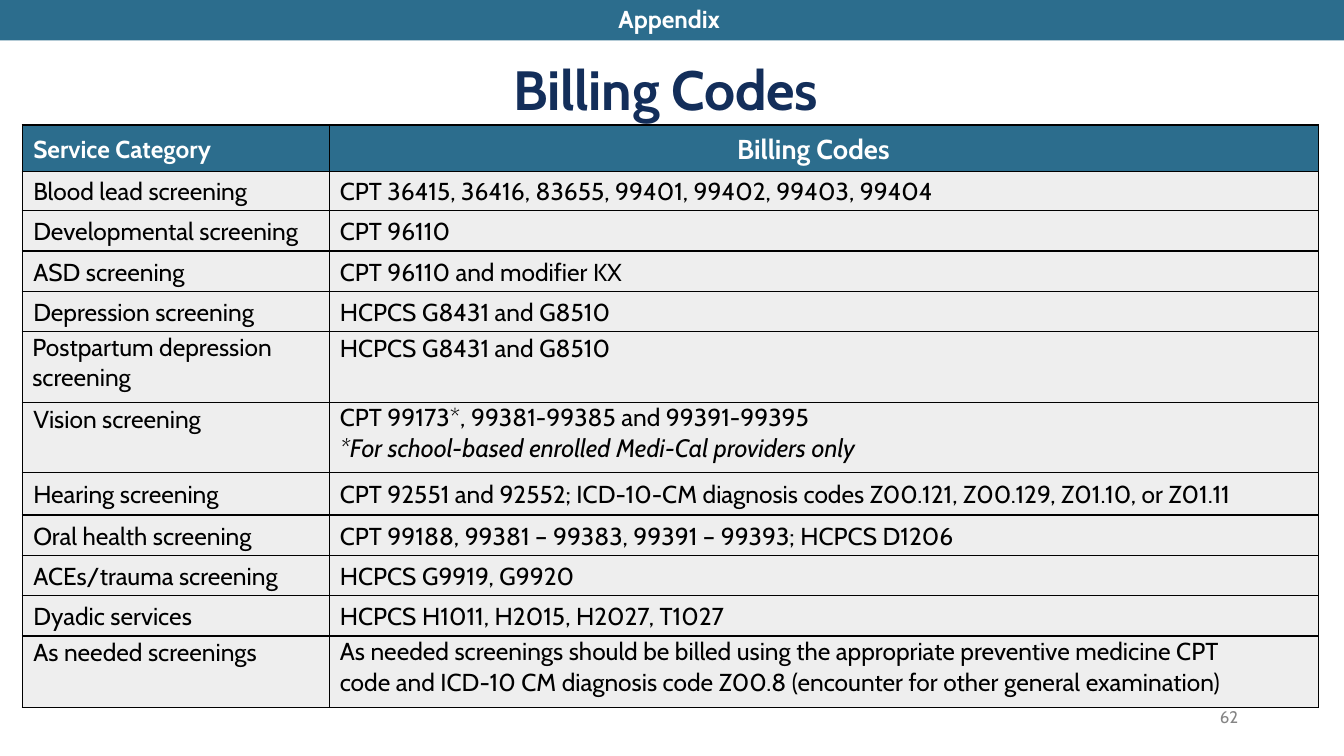
from pptx import Presentation
from pptx.dml.color import RGBColor
from pptx.enum.text import MSO_ANCHOR, MSO_AUTO_SIZE, PP_ALIGN
from pptx.oxml import parse_xml
from pptx.oxml.ns import nsdecls
from pptx.util import Inches, Pt

TEAL = RGBColor(0x2C, 0x6D, 0x8D)
NAVY = RGBColor(0x13, 0x2E, 0x5A)
PALE = RGBColor(0xEE, 0xEE, 0xEE)
GRAY = RGBColor(0x85, 0x85, 0x85)
WHITE = RGBColor(0xFF, 0xFF, 0xFF)
BLACK = RGBColor(0x00, 0x00, 0x00)

SERVICES = [
    (0.39, 4.7, "Blood lead screening", "CPT 36415, 36416, 83655, 99401, 99402, 99403, 99404"),
    (0.4, 4, "Developmental screening", "CPT 96110"),
    (0.4, 4.2, "ASD screening", "CPT 96110 and modifier KX"),
    (0.4, 4.2, "Depression screening", "HCPCS G8431 and G8510"),
    (0.7, 4.2, "Postpartum depression\nscreening", "HCPCS G8431 and G8510"),
    (0.7, 4.3, "Vision screening",
     "CPT 99173*, 99381-99385 and 99391-99395\n"
     "*For school-based enrolled Medi-Cal providers only"),
    (0.42, 5.7, "Hearing screening",
     "CPT 92551 and 92552; ICD-10-CM diagnosis codes Z00.121, Z00.129, Z01.10, or Z01.11"),
    (0.4, 4.5, "Oral health screening", "CPT 99188, 99381 – 99383, 99391 – 99393; HCPCS D1206"),
    (0.4, 4.5, "ACEs/trauma screening", "HCPCS G9919, G9920"),
    (0.4, 4.7, "Dyadic services", "HCPCS H1011, H2015, H2027, T1027"),
    (0.71, 4.7, "As needed screenings",
     "As needed screenings should be billed using the appropriate preventive medicine CPT\n"
     "code and ICD-10 CM diagnosis code Z00.8 (encounter for other general examination)"),
]


def write(frame, text, size=17.5, color=BLACK, bold=False, align=PP_ALIGN.LEFT,
          indent=0, line=23, before=0, after=0, spacing=0):
    lines = text.split("\n")
    for number, words in enumerate(lines):
        paragraph = frame.paragraphs[0] if number == 0 else frame.add_paragraph()
        paragraph.alignment = align
        paragraph.line_spacing = Pt(line)
        paragraph.space_before = Pt(before)
        paragraph.space_after = Pt(after if number == len(lines) - 1 else 0)
        properties = paragraph._p.get_or_add_pPr()
        properties.set("marL", str(Inches(indent)))
        properties.set("indent", "0")
        properties.append(parse_xml(f"<a:buNone {nsdecls('a')}/>"))
        footnote = words.startswith("*")
        run = paragraph.add_run()
        run.text = words
        run.font.name = "Cabin"
        run.font.size = Pt(18 if footnote else size)
        run.font.bold = bold
        run.font.italic = footnote
        run.font.color.rgb = color
        if spacing:
            run.font._element.set("spc", str(int(spacing * 100)))


class BillingSlide:
    """Holds the slide and its style, and adds each kind of element."""

    def __init__(self, deck):
        self.slide = deck.slides.add_slide(deck.slide_layouts[1])
        self.border = BLACK
        self.border_width = Pt(0.95)

    def band(self, holder, top, height, text, inset=0.01, fill=None, **style):
        holder.left, holder.top = Inches(0), Inches(top)
        holder.width, holder.height = Inches(13.33), Inches(height)
        if fill is not None:
            holder.fill.solid()
            holder.fill.fore_color.rgb = fill
        frame = holder.text_frame
        frame.word_wrap = True
        frame.auto_size = MSO_AUTO_SIZE.NONE
        frame.vertical_anchor = MSO_ANCHOR.TOP
        frame.margin_left = frame.margin_right = frame.margin_bottom = 0
        frame.margin_top = Inches(inset)
        write(frame, text, **style)

    def page_number(self, text, top, height, **style):
        holder = self.slide.shapes.add_textbox(0, 0, 0, 0)
        self.band(holder, top, height, text, inset=0, **style)

    def cell(self, cell, text, fill, anchor=MSO_ANCHOR.MIDDLE, **style):
        cell.margin_left = cell.margin_right = cell.margin_top = cell.margin_bottom = 0
        cell.vertical_anchor = anchor
        properties = cell._tc.get_or_add_tcPr()
        for side in "LRTB":
            properties.append(parse_xml(
                f"<a:ln{side} {nsdecls('a')} w='{self.border_width}'><a:solidFill>"
                f"<a:srgbClr val='{self.border}'/></a:solidFill></a:ln{side}>"))
        cell.fill.solid()
        cell.fill.fore_color.rgb = fill
        write(cell.text_frame, text, **style)

    def code_table(self, left, top, widths, header_height, services):
        heights = [header_height] + [service[0] for service in services]
        table = self.slide.shapes.add_table(
            len(heights), len(widths), Inches(left), Inches(top),
            Inches(sum(widths)), Inches(sum(heights))).table
        table.first_row = table.horz_banding = False
        for column, width in zip(table.columns, widths):
            column.width = Inches(width)
        for row, height in zip(table.rows, heights):
            row.height = Inches(height)
        self.cell(table.cell(0, 0), "Service Category", TEAL, color=WHITE, bold=True,
                  indent=0.11, before=1.9, after=7.2)
        self.cell(table.cell(0, 1), "Billing Codes", TEAL, size=19.5, color=WHITE, bold=True,
                  indent=4.04, line=26, before=1.8, after=5)
        for row, (height, after, *texts) in enumerate(services, 1):
            tall = any("\n" in text for text in texts)
            for column, text in enumerate(texts):
                double = "\n" in text
                self.cell(table.cell(row, column), text, PALE,
                          anchor=MSO_ANCHOR.TOP if tall else MSO_ANCHOR.MIDDLE,
                          indent=0.1 if column or double else 0.11,
                          line=22 if double else 23,
                          after=after + 21.6 if tall and not double else after)


def main():
    deck = Presentation()
    deck.slide_width, deck.slide_height = Inches(13.33), Inches(7.5)
    billing = BillingSlide(deck)
    title, section = billing.slide.placeholders
    billing.band(section, 0, 0.4, "Appendix ", fill=TEAL, color=WHITE, bold=True,
                 align=PP_ALIGN.CENTER, after=4.5)
    billing.band(title, 0.47, 0.76, "Billing Codes ", size=39.5, color=NAVY, bold=True,
                 align=PP_ALIGN.CENTER, line=52, after=1.9, spacing=-0.2)
    billing.code_table(0.22, 1.24, [3.05, 9.81], 0.46, SERVICES)
    billing.page_number("62", 7.02, 0.2, size=12, color=GRAY, indent=12.1, line=14, after=0.3)
    deck.save("out.pptx")


if __name__ == "__main__":
    main()
